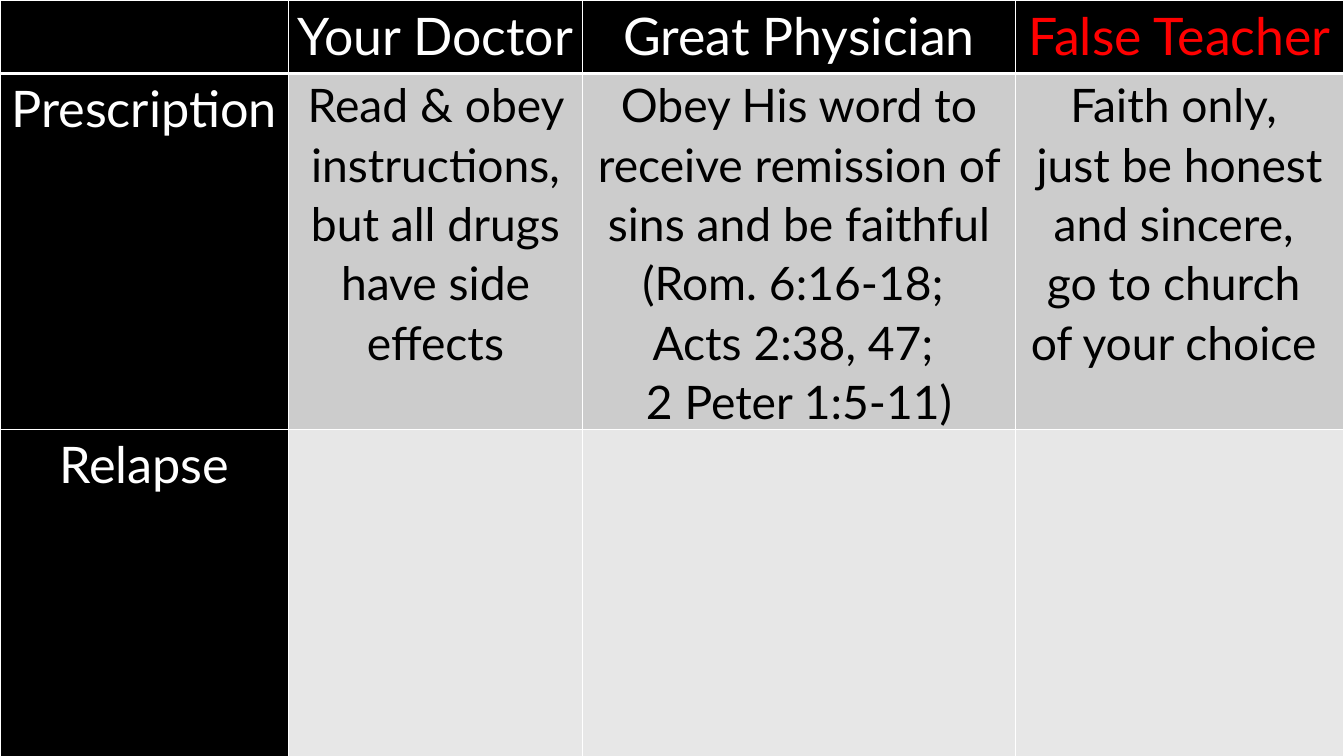
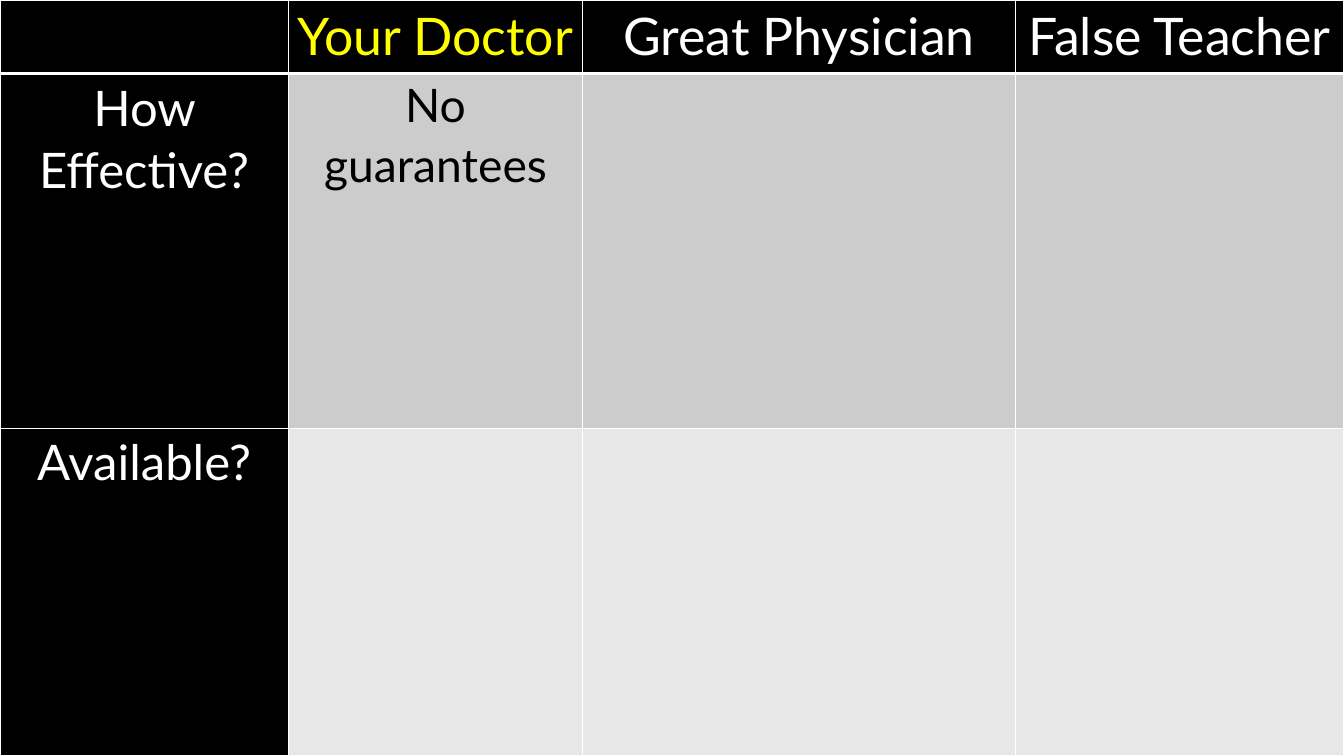
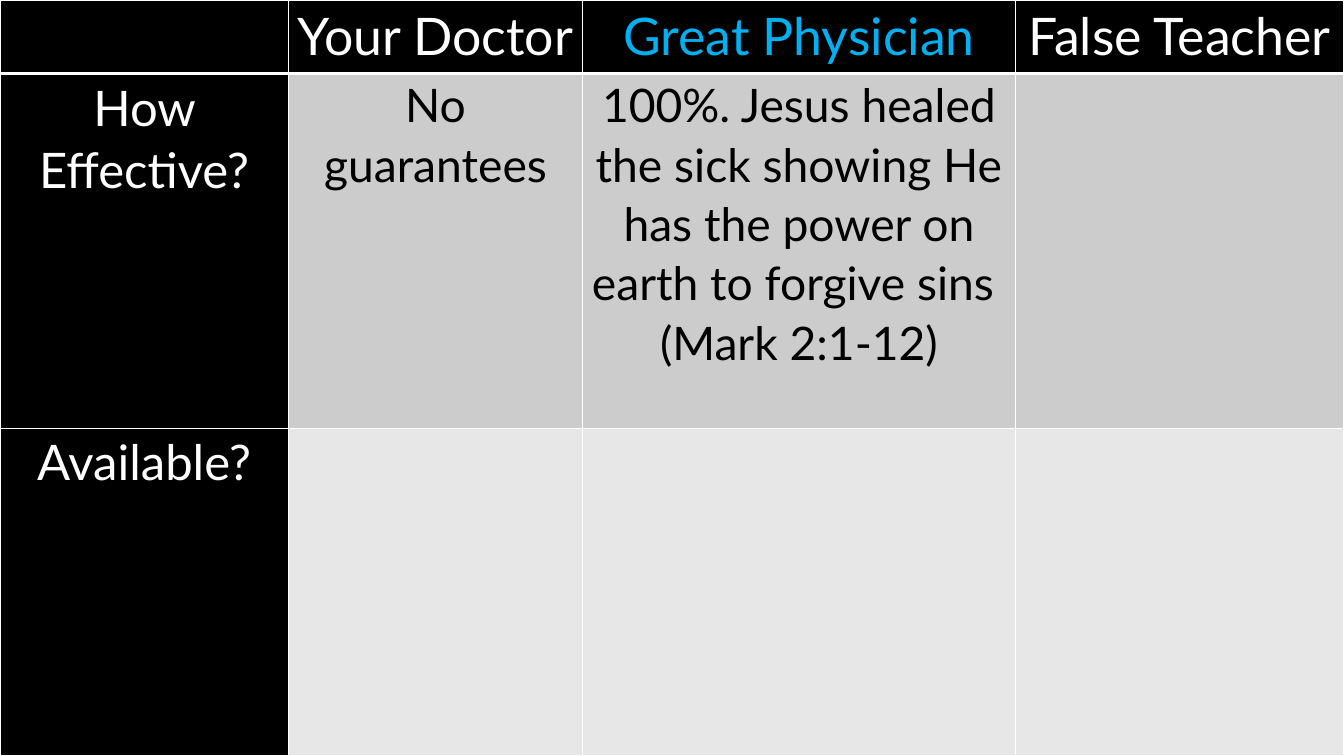
"""Build three slides that compare a doctor, the Great Physician and a false teacher."""
from dataclasses import dataclass

from lxml import etree
from pptx import Presentation
from pptx import presentation as pres
from pptx import table as tbl
from pptx import util as u
from pptx.dml.color import RGBColor
from pptx.enum import text
from pptx.oxml import ns

COLORS = {
    "black": "000000",
    "white": "FFFFFF",
    "red": "FF0000",
    "yellow": "FFFF00",
    "blue": "00B0F0",
    "upper": "CCCCCC",
    "lower": "E7E7E7",
}
FONT = "Lato"
HEADER_SIZE = 37
ANSWER_SIZE = 33
HEADINGS = ("", "Your Doctor", "Great Physician", "False Teacher")
COLUMN_WIDTHS = (2.86, 2.92, 4.29, 3.26)
ROW_HEIGHTS = (0.73, 3.52, 3.25)
BODY_FILLS = ("upper", "lower")


@dataclass(frozen=True)
class Topic:
    """A row label and its answers, one for each heading."""

    label: str
    answers: tuple[str, ...] = ("", "", "")


@dataclass(frozen=True)
class Comparison:
    """One slide: its topics and the heading in focus."""

    topics: tuple[Topic, Topic]
    focus: str
    focus_color: str
    label_size: int


COMPARISONS = (
    Comparison(
        (
            Topic("Prescription", (
                "Read & obey instructions, but all drugs have side effects",
                "Obey His word to receive remission of sins and be faithful (Rom. 6:16-18; \n"
                "Acts 2:38, 47; \n2 Peter 1:5-11)",
                "Faith only, \njust be honest and sincere, \ngo to church \nof your choice ",
            )),
            Topic("Relapse"),
        ),
        "False Teacher", "red", 36,
    ),
    Comparison(
        (Topic("How Effective?", ("No guarantees", "", "")), Topic("Available?")),
        "Your Doctor", "yellow", 35,
    ),
    Comparison(
        (
            Topic("How Effective?", (
                "No guarantees",
                "100%. Jesus healed the sick showing He has the power on earth "
                "to forgive sins \n(Mark 2:1-12)",
                "",
            )),
            Topic("Available?"),
        ),
        "Great Physician", "blue", 35,
    ),
)


def rgb(name: str) -> RGBColor:
    """Return a named colour."""
    return RGBColor.from_string(COLORS[name])


def set_borders(cell: tbl._Cell, top: int, bottom: int) -> None:
    """Give a cell white borders, with one point at the sides."""
    properties = cell._tc.get_or_add_tcPr()
    for index, (side, points) in enumerate((("L", 1), ("R", 1), ("T", top), ("B", bottom))):
        line = etree.Element(ns.qn(f"a:ln{side}"), w=str(u.Pt(points)))
        fill = etree.SubElement(line, ns.qn("a:solidFill"))
        etree.SubElement(fill, ns.qn("a:srgbClr"), val=COLORS["white"])
        properties.insert(index, line)


def fill_cell(cell: tbl._Cell, words: str, size: int, color: str, fill: str) -> None:
    """Set the fill, margins and centred text of a cell."""
    cell.fill.solid()
    cell.fill.fore_color.rgb = rgb(fill)
    cell.margin_left = cell.margin_right = u.Inches(0.07)
    cell.margin_top = cell.margin_bottom = u.Inches(0)
    if not words:
        return
    cell.text_frame.text = words
    for paragraph in cell.text_frame.paragraphs:
        paragraph.alignment = text.PP_ALIGN.CENTER
        paragraph.line_spacing = 1.07
        paragraph.font.name = FONT
        paragraph.font.size = u.Pt(size)
        paragraph.font.color.rgb = rgb(color)


def add_comparison(deck: pres.Presentation, comparison: Comparison) -> None:
    """Add a slide filled by one comparison table."""
    page = deck.slides.add_slide(deck.slide_layouts[6])
    page.background.fill.solid()
    page.background.fill.fore_color.rgb = rgb("black")
    table = page.shapes.add_table(
        len(ROW_HEIGHTS), len(COLUMN_WIDTHS), u.Inches(0), u.Inches(0),
        u.Inches(sum(COLUMN_WIDTHS)), u.Inches(sum(ROW_HEIGHTS)),
    ).table
    table.first_row = table.horz_banding = False
    for column, width in zip(table.columns, COLUMN_WIDTHS):
        column.width = u.Inches(width)
    for row, height in zip(table.rows, ROW_HEIGHTS):
        row.height = u.Inches(height)

    for index, heading in enumerate(HEADINGS):
        color = comparison.focus_color if heading == comparison.focus else "white"
        fill_cell(table.cell(0, index), heading, HEADER_SIZE, color, "black")
    for row_index, (topic, fill) in enumerate(zip(comparison.topics, BODY_FILLS), 1):
        fill_cell(table.cell(row_index, 0), topic.label, comparison.label_size, "white", "black")
        for index, answer in enumerate(topic.answers, 1):
            fill_cell(table.cell(row_index, index), answer, ANSWER_SIZE, "black", fill)
    for row_index, row in enumerate(table.rows):
        for cell in row.cells:
            set_borders(cell, 3 if row_index == 1 else 1, 3 if row_index == 0 else 1)


def main() -> None:
    """Build and save the deck."""
    deck = Presentation()
    deck.slide_width = u.Inches(13.33)
    deck.slide_height = u.Inches(7.5)
    for comparison in COMPARISONS:
        add_comparison(deck, comparison)
    deck.save("out.pptx")


if __name__ == "__main__":
    main()
